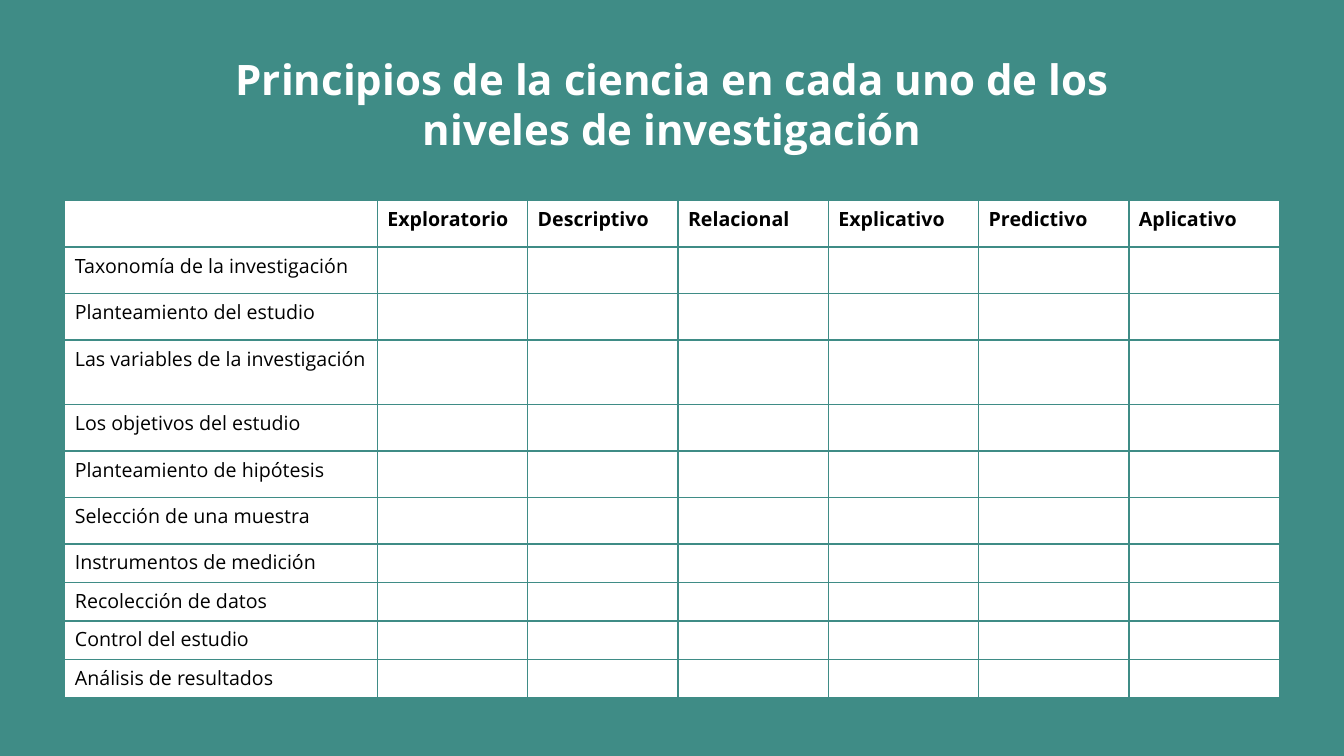
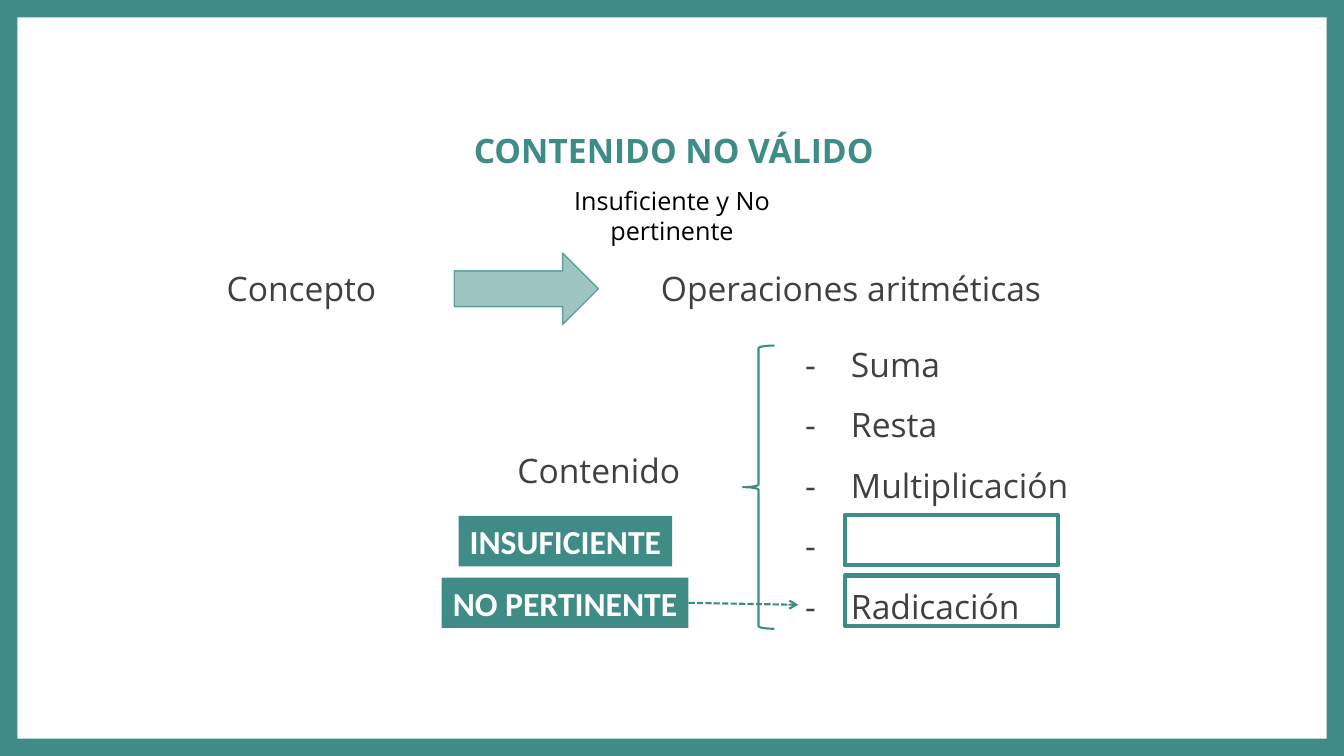
"""Build two slides on research levels and content validity."""
from dataclasses import dataclass

from lxml import etree
from pptx import Presentation
from pptx.dml.color import RGBColor
from pptx.enum.dml import MSO_LINE
from pptx.enum.shapes import MSO_CONNECTOR, MSO_SHAPE
from pptx.enum.text import MSO_ANCHOR, PP_ALIGN
from pptx.oxml.ns import qn
from pptx.util import Pt

RECTANGLE = MSO_SHAPE.RECTANGLE
RIGHT_ARROW = MSO_SHAPE.RIGHT_ARROW
LEFT_BRACE = MSO_SHAPE.LEFT_BRACE
FRAME = MSO_SHAPE.FRAME
STRAIGHT = MSO_CONNECTOR.STRAIGHT
SQUARE_DOT = MSO_LINE.SQUARE_DOT
MIDDLE = MSO_ANCHOR.MIDDLE
LEFT, CENTER = PP_ALIGN.LEFT, PP_ALIGN.CENTER

TEAL, WHITE, BLACK, GREY = "3F8C86", "FFFFFF", "000000", "404040"
SANS, CALIBRI = "Open Sans", "Calibri"
SLIDE_WIDTH, SLIDE_HEIGHT = 960, 540

LEVELS = ["", "Exploratorio", "Descriptivo", "Relacional", "Explicativo",
          "Predictivo", "Aplicativo"]
NORMAL, TALL, SHORT = 33.2, 46.1, 27.5
PRINCIPLES = [
    ("Taxonomía de la investigación", NORMAL),
    ("Planteamiento del estudio", NORMAL),
    ("Las variables de la investigación", TALL),
    ("Los objetivos del estudio", NORMAL),
    ("Planteamiento de hipótesis", NORMAL),
    ("Selección de una muestra", NORMAL),
    ("Instrumentos de medición", SHORT),
    ("Recolección de datos", SHORT),
    ("Control del estudio", SHORT),
    ("Análisis de resultados", SHORT),
]
OPERATIONS = ["-\tSuma", "-\tResta", "-\tMultiplicación", "-", "-\tRadicación"]


@dataclass(frozen=True)
class Box:
    left: float
    top: float
    width: float
    height: float

    def lengths(self) -> tuple:
        return Pt(self.left), Pt(self.top), Pt(self.width), Pt(self.height)


@dataclass(frozen=True)
class TextStyle:
    size: float = 24
    color: str = GREY
    bold: bool = False
    font: str = SANS
    align: PP_ALIGN = LEFT
    spacing: float = 1.0
    tab: float = 0


@dataclass(frozen=True)
class Label:
    box: Box
    lines: list[str]
    style: TextStyle


BODY = TextStyle()
TITLE = TextStyle(30, WHITE, True, align=CENTER)
HEADING = TextStyle(24, TEAL, True, align=CENTER)
SUBHEADING = TextStyle(18, BLACK, align=CENTER)
CENTERED = TextStyle(align=CENTER)
TAG = TextStyle(24, WHITE, True, CALIBRI, CENTER)
DASHED_LIST = TextStyle(spacing=1.5, tab=32.8)
CELL = TextStyle(14, BLACK)
HEADER_CELL = TextStyle(14, BLACK, True)

CONTENT_LABELS = [
    Label(Box(329, 89.3, 304.6, 36), ["CONTENIDO NO VÁLIDO"], HEADING),
    Label(Box(360, 128.9, 240, 29), ["Insuficiente y No pertinente"], SUBHEADING),
    Label(Box(154.8, 188, 128.2, 36), ["Concepto"], BODY),
    Label(Box(465, 188, 311, 36), ["Operaciones aritméticas"], BODY),
    Label(Box(361.5, 317.5, 132.5, 46.8), ["Contenido"], CENTERED),
    Label(Box(568, 227.5, 204.5, 221), OPERATIONS, DASHED_LIST),
]
TAGS = [
    Label(Box(327.6, 368.6, 152.6, 36), ["INSUFICIENTE"], TAG),
    Label(Box(315.4, 412.6, 176.4, 36), ["NO PERTINENTE"], TAG),
]
ANSWER_TOPS = [367.9, 411.1]


def color(value: str) -> RGBColor:
    return RGBColor.from_string(value)


def write_lines(text_frame, lines: list[str], style: TextStyle) -> None:
    text_frame.word_wrap = True
    text_frame.text = "\n".join(lines)
    for paragraph in text_frame.paragraphs:
        if style.tab:
            tabs = etree.SubElement(paragraph._p.get_or_add_pPr(), qn("a:tabLst"))
            etree.SubElement(tabs, qn("a:tab"), pos=str(Pt(style.tab)), algn="l")
        paragraph.alignment = style.align
        paragraph.line_spacing = style.spacing
        for run in paragraph.runs:
            run.font.size = Pt(style.size)
            run.font.name = style.font
            run.font.bold = style.bold
            run.font.color.rgb = color(style.color)


def add_label(slide, label: Label) -> None:
    shape = slide.shapes.add_textbox(*label.box.lengths())
    write_lines(shape.text_frame, label.lines, label.style)


def add_figure(slide, kind: MSO_SHAPE, box: Box, fill: str = "",
               line: str = "", weight: float = 1):
    shape = slide.shapes.add_shape(kind, *box.lengths())
    shape.shadow.inherit = False
    if fill:
        shape.fill.solid()
        shape.fill.fore_color.rgb = color(fill)
    else:
        shape.fill.background()
    if line:
        shape.line.color.rgb = color(line)
        shape.line.width = Pt(weight)
    else:
        shape.line.fill.background()
    return shape


def add_tag(slide, label: Label):
    shape = add_figure(slide, RECTANGLE, label.box, fill=TEAL)
    shape.text_frame.vertical_anchor = MIDDLE
    write_lines(shape.text_frame, label.lines, label.style)
    return shape


def set_opacity(fill_parent, percent: int) -> None:
    swatch = fill_parent.find(qn("a:solidFill")).find(qn("a:srgbClr"))
    etree.SubElement(swatch, qn("a:alpha"), val=str(percent * 1000))


def add_dashed_arrow(slide, start, end_left: float, end_top: float) -> None:
    connector = slide.shapes.add_connector(
        STRAIGHT, 0, 0, Pt(end_left), Pt(end_top))
    connector.begin_connect(start, 3)
    connector.line.color.rgb = color(TEAL)
    connector.line.width = Pt(1.5)
    connector.line.dash_style = SQUARE_DOT
    etree.SubElement(connector.line._get_or_add_ln(), qn("a:tailEnd"), type="arrow")
    etree.SubElement(connector._element.spPr, qn("a:effectLst"))


def format_cell(cell, text: str, style: TextStyle) -> None:
    write_lines(cell.text_frame, [text], style)
    if not text:
        end = cell.text_frame.paragraphs[0]._p.get_or_add_endParaRPr()
        end.set("sz", str(style.size * 100))
    properties = cell._tc.get_or_add_tcPr()
    for side in ("lnL", "lnR", "lnT", "lnB"):
        border = etree.SubElement(properties, qn(f"a:{side}"), w=str(Pt(1)))
        fill = etree.SubElement(border, qn("a:solidFill"))
        etree.SubElement(fill, qn("a:srgbClr"), val=TEAL)
    cell.fill.solid()
    cell.fill.fore_color.rgb = color(WHITE)


def add_principles_table(slide, box: Box) -> None:
    rows = [(LEVELS, NORMAL)]
    rows += [([name] + [""] * (len(LEVELS) - 1), height)
             for name, height in PRINCIPLES]
    table = slide.shapes.add_table(len(rows), len(LEVELS), *box.lengths()).table
    table.first_row = False
    table.horz_banding = False
    for index, column in enumerate(table.columns):
        column.width = Pt(107.4 if index else 223.2)
    for row_index, (texts, height) in enumerate(rows):
        table.rows[row_index].height = Pt(height)
        for column_index, text in enumerate(texts):
            format_cell(table.cell(row_index, column_index), text,
                        CELL if row_index else HEADER_CELL)


def add_slide(presentation, background: str):
    slide = presentation.slides.add_slide(presentation.slide_layouts[6])
    slide.background.fill.solid()
    slide.background.fill.fore_color.rgb = color(background)
    return slide


def build_principles(presentation) -> None:
    slide = add_slide(presentation, TEAL)
    add_label(slide, Label(
        Box(142.6, 34.6, 675.4, 80),
        ["Principios de la ciencia en cada uno de los niveles de investigación"],
        TITLE))
    add_principles_table(slide, Box(46.3, 143.3, 867.6, 355))


def build_content(presentation) -> None:
    slide = add_slide(presentation, WHITE)
    tags = [add_tag(slide, label) for label in TAGS]
    add_dashed_arrow(slide, tags[-1], 570.2, 432)
    for label in CONTENT_LABELS:
        add_label(slide, label)
    for top in ANSWER_TOPS:
        add_figure(slide, RECTANGLE, Box(603.4, top, 152.6, 36),
                   line=TEAL, weight=3)
    add_figure(slide, LEFT_BRACE, Box(530.6, 246.8, 22.5, 202.3),
               line=TEAL, weight=1.5)
    arrow = add_figure(slide, RIGHT_ARROW, Box(324.5, 180.7, 103, 51.1),
                       fill=TEAL, line=TEAL)
    set_opacity(arrow._element.spPr, 50)
    set_opacity(arrow.line._get_or_add_ln(), 75)
    frame = add_figure(slide, FRAME, Box(0, 0, SLIDE_WIDTH, SLIDE_HEIGHT), fill=TEAL)
    frame.adjustments[0] = 0.023


def main() -> None:
    presentation = Presentation()
    presentation.slide_width = Pt(SLIDE_WIDTH)
    presentation.slide_height = Pt(SLIDE_HEIGHT)
    build_principles(presentation)
    build_content(presentation)
    presentation.save("out.pptx")


if __name__ == "__main__":
    main()
